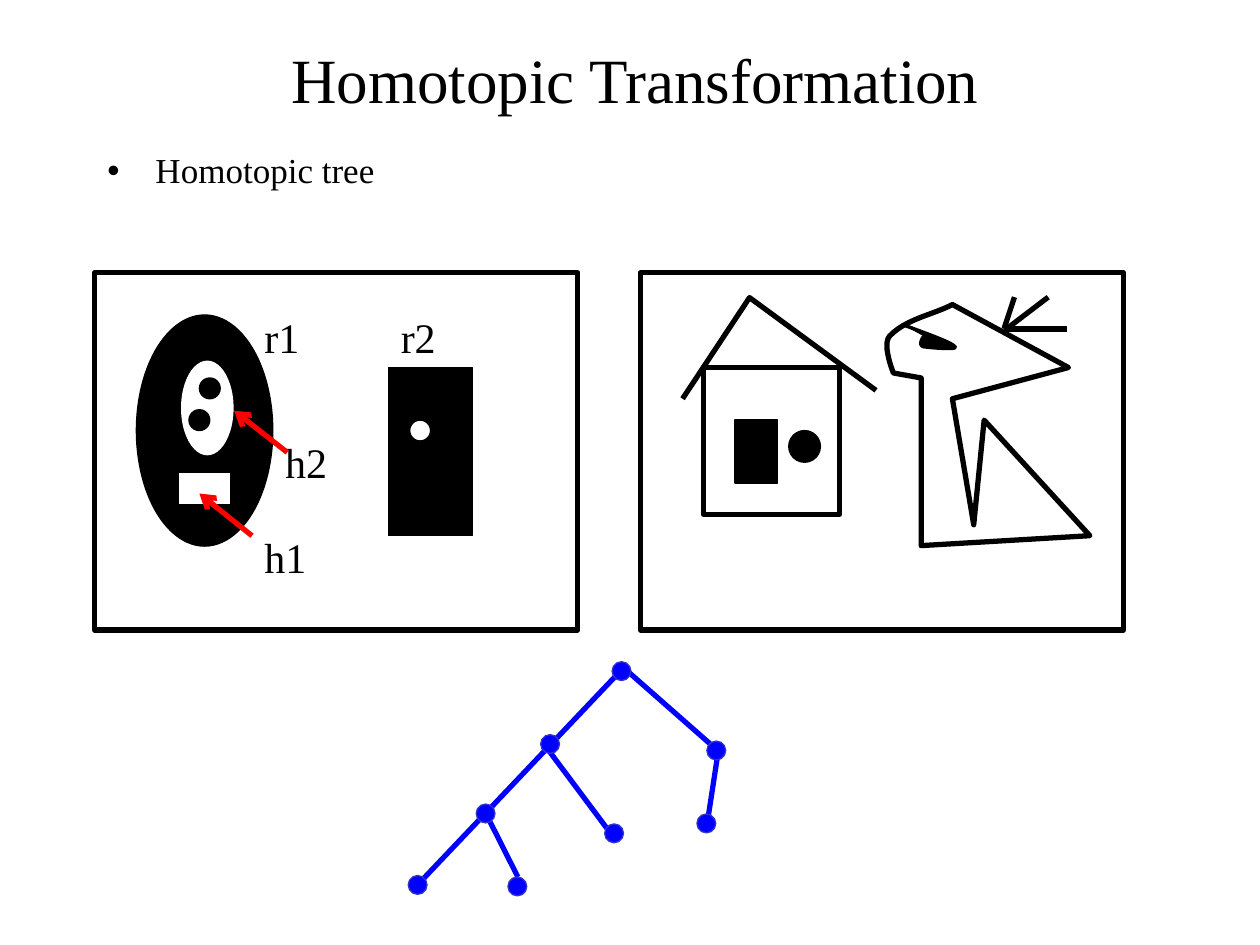
from dataclasses import dataclass

from lxml import etree
from pptx import Presentation
from pptx.dml.color import RGBColor
from pptx.enum.shapes import MSO_CONNECTOR, MSO_SHAPE
from pptx.enum.text import MSO_ANCHOR, MSO_AUTO_SIZE, PP_ALIGN
from pptx.oxml.ns import qn
from pptx.util import Cm, Pt

RECT, OVAL = MSO_SHAPE.RECTANGLE, MSO_SHAPE.OVAL
STRAIGHT = MSO_CONNECTOR.STRAIGHT


@dataclass(frozen=True)
class Theme:
    font: str = "Times New Roman"
    black: RGBColor = RGBColor(0, 0, 0)
    white: RGBColor = RGBColor(255, 255, 255)
    red: RGBColor = RGBColor(255, 0, 0)
    blue: RGBColor = RGBColor(0, 0, 255)
    node_edge: RGBColor = RGBColor(0x33, 0x33, 0xCC)
    title: Pt = Pt(36)
    bullet: Pt = Pt(20)
    label: Pt = Pt(24)
    thick: Pt = Pt(3)
    medium: Pt = Pt(2)
    thin: Pt = Pt(0.75)


theme = Theme()


def paint(shape, fill, line, width=theme.thin):
    shape.shadow.inherit = False
    if fill is None:
        shape.fill.background()
    else:
        shape.fill.solid()
        shape.fill.fore_color.rgb = fill
    if line is None:
        shape.line.fill.background()
    else:
        shape.line.color.rgb = line
        shape.line.width = width


def draw_line(shapes, start, end, color):
    line = shapes.add_connector(STRAIGHT, *(Cm(value) for value in start + end))
    line.line.color.rgb = color
    line.line.width = theme.thick
    properties = line.line._get_or_add_ln().getparent()
    etree.SubElement(properties, qn("a:effectLst"))
    return line


deck = Presentation()
deck.slide_width, deck.slide_height = Cm(25.4), Cm(19.05)
page = deck.slides.add_slide(deck.slide_layouts[1])
shapes = page.shapes

# Title and list
title, body = page.placeholders
for box, text, size, place in (
    (title, "Homotopic Transformation", theme.title, (1.63, 0.48, 22.35, 2.18)),
    (body, "Homotopic tree", theme.bullet, (1.91, 2.97, 21.39, 14.63)),
):
    box.left, box.top, box.width, box.height = (Cm(value) for value in place)
    box.text_frame.text = text
    box.text_frame.auto_size = MSO_AUTO_SIZE.NONE
    font = box.text_frame.paragraphs[0].runs[0].font
    font.name, font.size, font.color.rgb = theme.font, size, theme.black
title.text_frame.vertical_anchor = MSO_ANCHOR.MIDDLE
title.text_frame.paragraphs[0].alignment = PP_ALIGN.CENTER
para = body.text_frame.paragraphs[0]
para.line_spacing = 0.9
indent = Cm(0.97)
para._p.get_or_add_pPr().set("marL", str(indent))
para._p.get_or_add_pPr().set("indent", str(-indent))

# Frames, regions with holes, and the house
for kind, place, fill, line, width in (
    (RECT, (1.91, 5.5, 9.74, 7.2), None, theme.black, theme.thick),
    (OVAL, (2.75, 6.35, 2.75, 4.66), theme.black, theme.black, theme.thin),
    (OVAL, (3.65, 7.27, 1.06, 1.91), theme.white, None, theme.thin),
    (OVAL, (4.02, 7.62, 0.42, 0.42), theme.black, theme.black, theme.thin),
    (OVAL, (3.81, 8.26, 0.42, 0.42), theme.black, theme.black, theme.thin),
    (RECT, (3.6, 9.53, 1.06, 0.64), theme.white, theme.black, theme.thin),
    (RECT, (7.83, 7.41, 1.69, 3.39), theme.black, theme.black, theme.thin),
    (OVAL, (8.26, 8.47, 0.42, 0.42), theme.white, theme.black, theme.thin),
    (RECT, (12.91, 5.5, 9.74, 7.2), None, theme.black, theme.thick),
    (RECT, (14.18, 7.41, 2.75, 2.96), theme.white, theme.black, theme.thick),
    (RECT, (14.82, 8.47, 0.85, 1.27), theme.black, theme.black, theme.thin),
    (OVAL, (15.9, 8.68, 0.64, 0.64), theme.black, theme.black, theme.thin),
):
    paint(shapes.add_shape(kind, *(Cm(value) for value in place)), fill, line, width)

# Roof, bird and beak: two numbers are a corner, six are a Bezier curve
roof = [(13.76, 8.04), (15.11, 6), (17.66, 7.87)]
bird = [(18.57, 7.62), (18.57, 11), (21.97, 10.8), (19.84, 8.47), (19.63, 10.58),
        (19.2, 8.04), (21.54, 7.41), (19.2, 6.14),
        (18.8, 6.35, 18.26, 6.43, 17.93, 6.78),
        (17.78, 6.96, 18.01, 7.52, 18.01, 7.52)]
beak = [(18.21, 6.55), (18.69, 6.73, 19.2, 6.91, 19.25, 6.99),
        (19.33, 7.06, 18.75, 7.01, 18.62, 6.99),
        (18.52, 6.96, 18.57, 6.86, 18.62, 6.78)]
STEPS = 12
for outline, closed, fill, width in (
    (roof, False, None, theme.thick),
    (bird, True, theme.white, theme.thick),
    (beak, False, theme.black, theme.medium),
):
    points = []
    for segment in outline:
        if len(segment) == 2:
            points.append(segment)
            continue
        corners = [points[-1], segment[:2], segment[2:4], segment[4:]]
        for step in range(1, STEPS + 1):
            t = step / STEPS
            weights = ((1 - t) ** 3, 3 * t * (1 - t) ** 2, 3 * t * t * (1 - t), t ** 3)
            points.append(tuple(
                sum(weight * corner[axis] for weight, corner in zip(weights, corners))
                for axis in (0, 1)))
    points = [(Cm(x), Cm(y)) for x, y in points]
    builder = shapes.build_freeform(*points[0])
    builder.add_line_segments(points[1:], close=closed)
    paint(builder.convert_to_shape(), fill, theme.black, width)

# Feathers
for start, end in (
    ((20.24, 6.63), (20.45, 5.99)),
    ((20.24, 6.63), (21.51, 6.63)),
    ((20.29, 6.63), (21.13, 5.99)),
):
    draw_line(shapes, start, end, theme.black)

# Region and hole labels
for text, left, top, width in (
    ("r1", 5.08, 6.15, 1.27),
    ("r2", 7.83, 6.15, 1.27),
    ("h1", 5.08, 10.58, 2.11),
    ("h2", 5.5, 8.68, 2.11),
):
    box = shapes.add_textbox(Cm(left), Cm(top), Cm(width), Cm(1.27))
    box.text_frame.word_wrap = True
    box.text_frame.auto_size = MSO_AUTO_SIZE.SHAPE_TO_FIT_TEXT
    box.text_frame.text = text
    font = box.text_frame.paragraphs[0].runs[0].font
    font.name, font.size, font.color.rgb = theme.font, theme.label, theme.black

# Arrows to the holes
for start, end in (((5.08, 10.8), (4.02, 9.95)), ((5.79, 9.12), (4.72, 8.28))):
    arrow = draw_line(shapes, start, end, theme.red)
    etree.SubElement(arrow.line._get_or_add_ln(), qn("a:tailEnd"), type="arrow")

# Homotopic tree: edges below, nodes on top
tree = shapes.add_group_shape().shapes
for start, end in (
    ((8.33, 17.93), (12.57, 13.46)),
    ((12.57, 13.46), (14.48, 15.14)),
    ((11.07, 15.14), (12.34, 16.84)),
    ((9.8, 16.41), (10.44, 17.68)),
    ((14.48, 15.14), (14.25, 16.64)),
):
    draw_line(tree, start, end, theme.blue)
NODE = 0.38
for x, y in ((11.09, 15), (12.53, 13.53), (12.38, 16.8), (10.43, 17.87),
             (8.42, 17.84), (9.79, 16.4), (14.44, 15.13), (14.24, 16.6)):
    node = tree.add_shape(OVAL, Cm(x - NODE / 2), Cm(y - NODE / 2), Cm(NODE), Cm(NODE))
    paint(node, theme.blue, theme.node_edge)

deck.save("out.pptx")
